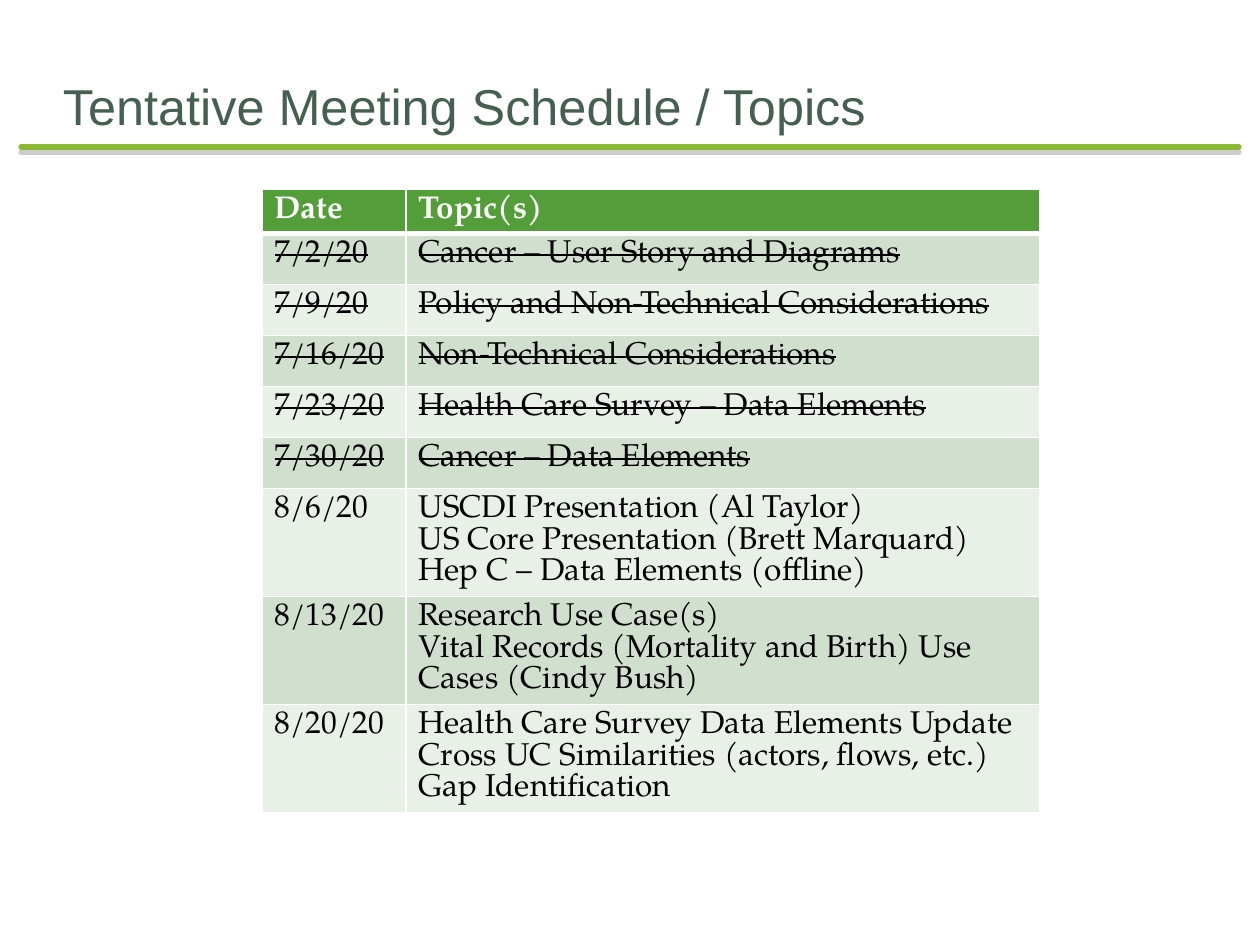
import pptx
import pptx.dml.color
import pptx.enum.shapes
import pptx.enum.text
import pptx.oxml
import pptx.oxml.ns
import pptx.util

PX = 914400 / 126
GREEN = pptx.dml.color.RGBColor(0x54, 0x9E, 0x39)
LIME = pptx.dml.color.RGBColor(0x8A, 0xB8, 0x33)
SLATE = pptx.dml.color.RGBColor(0x45, 0x5F, 0x51)
BAND_DARK = pptx.dml.color.RGBColor(0xD1, 0xDF, 0xCE)
BAND_LIGHT = pptx.dml.color.RGBColor(0xE9, 0xF0, 0xE8)
WHITE = pptx.dml.color.RGBColor(0xFF, 0xFF, 0xFF)
BLACK = pptx.dml.color.RGBColor(0, 0, 0)
NS = pptx.oxml.ns.nsdecls("a")


def px(length):
    return pptx.util.Emu(round(length * PX))


def write(frame, lines, size=18, font="TeX Gyre Pagella", color=BLACK,
          bold=False, strike=False, spacing=None):
    frame.word_wrap = True
    for i, line in enumerate(lines):
        paragraph = frame.add_paragraph() if i else frame.paragraphs[0]
        if spacing:
            paragraph.line_spacing = pptx.util.Pt(spacing)
        run = paragraph.add_run()
        run.text = line
        run.font.size = pptx.util.Pt(size)
        run.font.name = font
        run.font.bold = bold
        run.font.color.rgb = color
        if strike:
            run.font._element.set("strike", "sngStrike")


prs = pptx.Presentation()
prs.slide_width, prs.slide_height = px(1260), px(945)
slide = prs.slides.add_slide(prs.slide_layouts[6])

# Rule under the title, with a soft grey shadow below it
rule = slide.shapes.add_connector(
    pptx.enum.shapes.MSO_CONNECTOR.STRAIGHT, px(21), px(147), px(1239), px(147))
rule.line.color.rgb = LIME
rule.line.width = pptx.util.Pt(3)
rule.line._get_or_add_ln().set("cap", "rnd")
rule._element.spPr.append(pptx.oxml.parse_xml(
    f'<a:effectLst {NS}><a:outerShdw dist="38100" dir="5400000">'
    '<a:srgbClr val="808080"><a:alpha val="40000"/></a:srgbClr>'
    '</a:outerShdw></a:effectLst>'))

# Title
title = slide.shapes.add_textbox(px(63), px(63), px(1134), px(73)).text_frame
title.margin_left = title.margin_right = title.margin_bottom = 0
title.vertical_anchor = pptx.enum.text.MSO_ANCHOR.BOTTOM
write(title, ["Tentative Meeting Schedule / Topics"],
      size=28.8, font="Arial", color=SLATE)

# Schedule: date, topics, already held
meetings = [
    ("7/2/20", ["Cancer – User Story and Diagrams"], True),
    ("7/9/20", ["Policy and Non-Technical Considerations"], True),
    ("7/16/20", ["Non-Technical Considerations"], True),
    ("7/23/20", ["Health Care Survey – Data Elements"], True),
    ("7/30/20", ["Cancer – Data Elements"], True),
    ("8/6/20", ["USCDI Presentation (Al Taylor)",
                "US Core Presentation (Brett Marquard)",
                "Hep C – Data Elements (offline)"], False),
    ("8/13/20", ["Research Use Case(s)",
                 "Vital Records (Mortality and Birth) Use Cases (Cindy Bush)"], False),
    ("8/20/20", ["Health Care Survey Data Elements Update",
                 "Cross UC Similarities (actors, flows, etc.)",
                 "Gap Identification"], False),
]
rows = [("Date", ["Topic(s)"], False)] + meetings
HEADER_HEIGHT, ROW_HEIGHT, LINE_HEIGHT, PADDING = 44, 51, 32, 12
schedule = slide.shapes.add_table(
    len(rows), 2, px(262), px(189), px(778), px(620)).table
schedule.horz_banding = False
schedule.columns[0].width, schedule.columns[1].width = px(144), px(634)

for r, (date, topics, held) in enumerate(rows):
    header = r == 0
    line_count = 1 if header or held else 3
    height = HEADER_HEIGHT if header else max(
        ROW_HEIGHT, line_count * LINE_HEIGHT + PADDING)
    schedule.rows[r].height = px(height)
    for c, lines in enumerate(([date], topics)):
        cell = schedule.cell(r, c)
        write(cell.text_frame, lines, color=WHITE if header else BLACK,
              bold=header, strike=held, spacing=18.1)
        # White borders, thicker between the header and the first meeting
        borders = cell._tc.get_or_add_tcPr()
        for side in "LRTB":
            thick = (r, side) in ((0, "B"), (1, "T"))
            borders.append(pptx.oxml.parse_xml(
                f'<a:ln{side} {NS} w="{38100 if thick else 12700}"><a:solidFill>'
                f'<a:srgbClr val="{WHITE}"/></a:solidFill></a:ln{side}>'))
        cell.fill.solid()
        cell.fill.fore_color.rgb = (
            GREEN if header else BAND_DARK if r % 2 else BAND_LIGHT)

prs.save("out.pptx")
